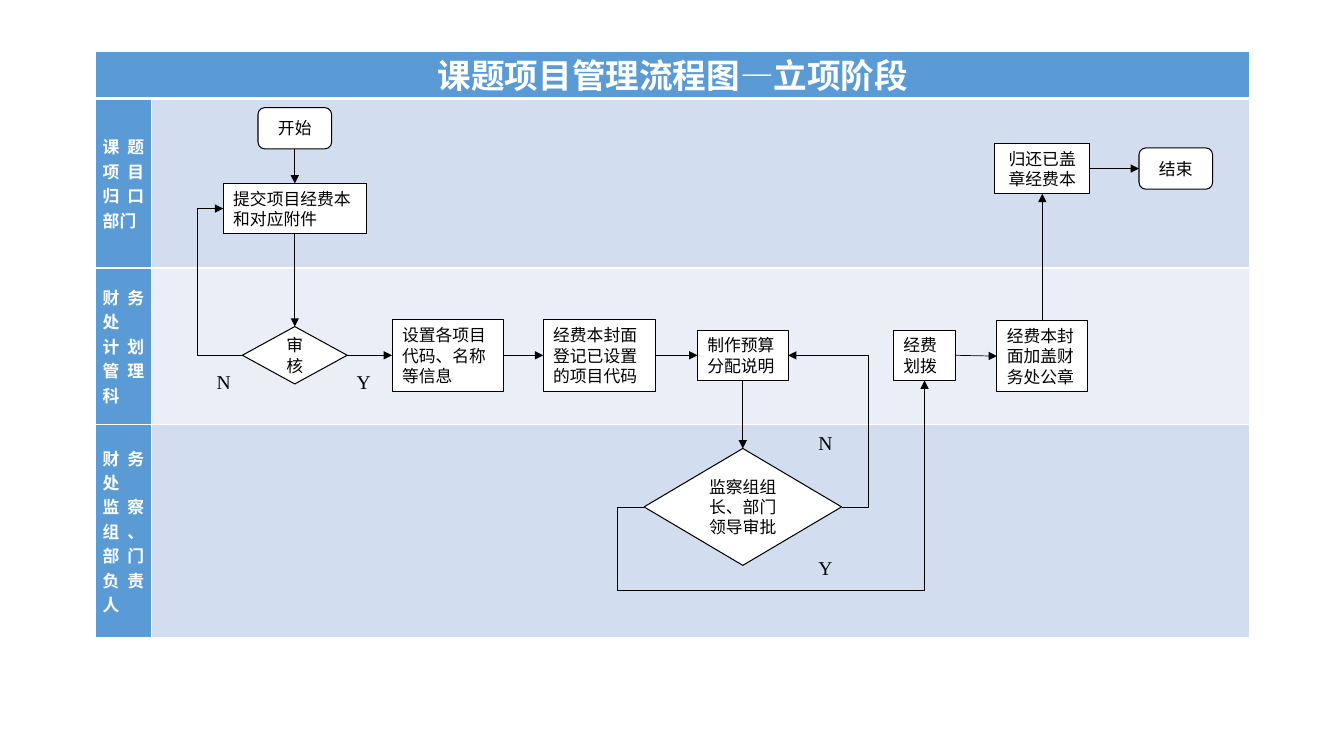
"""Builds the swimlane flowchart of the project set-up stage."""
from dataclasses import dataclass
from typing import Any, Optional

import lxml.etree
import pptx
import pptx.dml.color
import pptx.enum.shapes
import pptx.enum.text
import pptx.oxml.ns
import pptx.util

Pt = pptx.util.Pt
qn = pptx.oxml.ns.qn
Align = pptx.enum.text.PP_ALIGN
Anchor = pptx.enum.text.MSO_ANCHOR
Preset = pptx.enum.shapes.MSO_SHAPE
Route = pptx.enum.shapes.MSO_CONNECTOR
TOP, LEFT, BOTTOM, RIGHT = range(4)


@dataclass(frozen=True)
class Theme:
    header: str = "5B9BD5"
    lane_dark: str = "D2DEEF"
    lane_light: str = "EAEFF7"
    white: str = "FFFFFF"
    black: str = "000000"
    heading_font: str = "Calibri"
    step_font: str = "Times New Roman"
    title_size: float = 24
    text_size: float = 12
    answer_size: float = 14
    outline: float = 0.75
    thin: float = 0.5


@dataclass(frozen=True)
class Lane:
    names: tuple[str, ...]
    height: float
    fill: str


@dataclass(frozen=True)
class Step:
    text: str
    center_x: float
    center_y: float
    width: float
    height: float
    preset: Any = Preset.RECTANGLE
    align: Any = Align.LEFT


@dataclass(frozen=True)
class Flow:
    source: str
    source_side: int
    target: str
    target_side: int
    weight: float = 0.5
    via_x: Optional[float] = None
    via_y: Optional[float] = None


@dataclass(frozen=True)
class Answer:
    text: str
    left: float
    top: float


THEME = Theme()
CHART_LEFT, CHART_TOP = 68.4, 36.4
HEAD_WIDTH, LANE_WIDTH, TITLE_HEIGHT = 39.6, 784.8, 34
SUBMIT_X, APPROVE_X, STAMP_X = 210.6, 530.6, 744.5
RETURN_Y, FINANCE_Y, APPROVE_Y = 120.4, 253.8, 362.1

LANES = (
    Lane(("课题项目归口部门",), 121, THEME.lane_dark),
    Lane(("财务处", "计划管理科"), 111.6, THEME.lane_light),
    Lane(("财务处", "监察组、部门负责人"), 152.6, THEME.lane_dark),
)
STEPS = {
    "start": Step("开始", SUBMIT_X, 91.6, 52.6, 29.5, Preset.FLOWCHART_ALTERNATE_PROCESS, Align.CENTER),
    "submit": Step("提交项目经费本和对应附件", SUBMIT_X, 149, 102.2, 36),
    "review": Step("审核", SUBMIT_X, FINANCE_Y, 74.9, 41, Preset.DIAMOND, Align.CENTER),
    "codes": Step("设置各项目代码、名称等信息", 320, FINANCE_Y, 79.9, 51.1),
    "register": Step("经费本封面登记已设置的项目代码", 428, FINANCE_Y, 79.9, 51.1),
    "budget": Step("制作预算分配说明", APPROVE_X, FINANCE_Y, 64.8, 36),
    "approve": Step("监察组组长、部门领导审批", APPROVE_X, APPROVE_Y, 141.1, 83.5, Preset.DIAMOND, Align.CENTER),
    "allocate": Step("经费划拨", 660.4, FINANCE_Y, 44.6, 36),
    "stamp": Step("经费本封面加盖财务处公章", STAMP_X, 254.4, 64.8, 51.1),
    "return": Step("归还已盖章经费本", STAMP_X, RETURN_Y, 67.7, 36, align=Align.CENTER),
    "end": Step("结束", 839.9, RETURN_Y, 52.6, 29.5, Preset.FLOWCHART_ALTERNATE_PROCESS, Align.CENTER),
}
FLOWS = (
    Flow("start", BOTTOM, "submit", TOP, THEME.outline),
    Flow("submit", BOTTOM, "review", TOP),
    Flow("review", LEFT, "submit", LEFT, via_x=141.1),
    Flow("review", RIGHT, "codes", LEFT),
    Flow("codes", RIGHT, "register", LEFT),
    Flow("register", RIGHT, "budget", LEFT),
    Flow("budget", BOTTOM, "approve", TOP),
    Flow("approve", RIGHT, "budget", RIGHT, via_x=620),
    Flow("approve", LEFT, "allocate", BOTTOM, via_x=441, via_y=421.4),
    Flow("allocate", RIGHT, "stamp", LEFT),
    Flow("stamp", TOP, "return", BOTTOM),
    Flow("return", RIGHT, "end", LEFT, THEME.outline),
)
ANSWERS = (
    Answer("N", 147.6, 260.6),
    Answer("Y", 247.7, 260.6),
    Answer("N", 577.4, 304.6),
    Answer("Y", 577.4, 393.8),
)


def rgb(color: str) -> Any:
    return pptx.dml.color.RGBColor.from_string(color)


def write(frame: Any, *lines: str, size: float = THEME.text_size, font: str = THEME.step_font,
          color: str = THEME.black, bold: bool = False, align: Any = Align.LEFT) -> None:
    for index, line in enumerate(lines):
        paragraph = frame.add_paragraph() if index else frame.paragraphs[0]
        paragraph.alignment = align
        run = paragraph.add_run()
        run.text = line
        run.font.size, run.font.name, run.font.bold = Pt(size), font, bold
        run.font.color.rgb = rgb(color)


def paint_cell(cell: Any, fill: str, top: float = 1, bottom: float = 1) -> None:
    cell.fill.solid()
    cell.fill.fore_color.rgb = rgb(fill)
    properties = cell._tc.get_or_add_tcPr()
    for position, (side, weight) in enumerate((("L", 1), ("R", 1), ("T", top), ("B", bottom))):
        border = lxml.etree.Element(qn(f"a:ln{side}"), w=str(Pt(weight)))
        solid = lxml.etree.SubElement(border, qn("a:solidFill"))
        lxml.etree.SubElement(solid, qn("a:srgbClr"), val=THEME.white)
        properties.insert(position, border)


def draw_lanes(slide: Any) -> None:
    heights = [TITLE_HEIGHT, *(lane.height for lane in LANES)]
    lanes = slide.shapes.add_table(len(heights), 2, Pt(CHART_LEFT), Pt(CHART_TOP),
                                   Pt(HEAD_WIDTH + LANE_WIDTH), Pt(sum(heights))).table
    lanes.columns[0].width, lanes.columns[1].width = Pt(HEAD_WIDTH), Pt(LANE_WIDTH)
    for row, height in zip(lanes.rows, heights):
        row.height = Pt(height)
    lanes.cell(0, 0).merge(lanes.cell(0, 1))
    for column in range(2):
        paint_cell(lanes.cell(0, column), THEME.header, bottom=3)
    for index, lane in enumerate(LANES, start=1):
        top = 3 if index == 1 else 1
        head = lanes.cell(index, 0)
        paint_cell(head, THEME.header, top)
        paint_cell(lanes.cell(index, 1), lane.fill, top)
        head.vertical_anchor = Anchor.MIDDLE
        head.margin_left = head.margin_right = Pt(5)
        head.margin_top = head.margin_bottom = Pt(0)
        head._tc.get_or_add_tcPr().set("vert", "eaVert")
        write(head.text_frame, *lane.names, font=THEME.heading_font, color=THEME.white,
              bold=True, align=Align.JUSTIFY)


def place_title(slide: Any) -> None:
    title = slide.shapes.title
    title.left, title.top = Pt(CHART_LEFT), Pt(CHART_TOP)
    title.width, title.height = Pt(HEAD_WIDTH + LANE_WIDTH), Pt(TITLE_HEIGHT)
    frame = title.text_frame
    frame.margin_top = frame.margin_bottom = Pt(0)
    frame.vertical_anchor = Anchor.MIDDLE
    write(frame, "课题项目管理流程图—立项阶段", size=THEME.title_size, font=THEME.heading_font,
          color=THEME.white, bold=True, align=Align.CENTER)
    title.element.getparent().append(title.element)


def draw_step(slide: Any, step: Step) -> Any:
    box = slide.shapes.add_shape(step.preset, Pt(step.center_x - step.width / 2),
                                 Pt(step.center_y - step.height / 2), Pt(step.width), Pt(step.height))
    box.shadow.inherit = False
    box.fill.solid()
    box.fill.fore_color.rgb = rgb(THEME.white)
    box.line.color.rgb, box.line.width = rgb(THEME.black), Pt(THEME.outline)
    box.text_frame.word_wrap = True
    box.text_frame.vertical_anchor = Anchor.MIDDLE
    write(box.text_frame, step.text, align=step.align)
    return box


def draw_flow(slide: Any, flow: Flow, boxes: dict[str, Any]) -> None:
    route = Route.STRAIGHT if flow.via_x is None else Route.ELBOW
    arrow = slide.shapes.add_connector(route, 0, 0, 0, 0)
    arrow.begin_connect(boxes[flow.source], flow.source_side)
    arrow.end_connect(boxes[flow.target], flow.target_side)
    arrow.line.color.rgb, arrow.line.width = rgb(THEME.black), Pt(flow.weight)
    properties = arrow.element.spPr
    lxml.etree.SubElement(properties.find(qn("a:ln")), qn("a:tailEnd"), type="triangle")
    lxml.etree.SubElement(properties, qn("a:effectLst"))
    bends = []
    if flow.via_x is not None:
        bends.append((Pt(flow.via_x) - arrow.begin_x) / (arrow.end_x - arrow.begin_x))
    if flow.via_y is not None:
        bends.append((Pt(flow.via_y) - arrow.begin_y) / (arrow.end_y - arrow.begin_y))
        properties.find(qn("a:prstGeom")).set("prst", "bentConnector4")
    guides = properties.find(qn("a:prstGeom")).find(qn("a:avLst"))
    for number, bend in enumerate(bends, start=1):
        lxml.etree.SubElement(guides, qn("a:gd"), name=f"adj{number}", fmla=f"val {round(bend * 100000)}")


def draw_answer(slide: Any, answer: Answer) -> None:
    box = slide.shapes.add_textbox(Pt(answer.left), Pt(answer.top), Pt(32), Pt(24.5))
    box.text_frame.word_wrap = True
    write(box.text_frame, answer.text, size=THEME.answer_size)


def main() -> None:
    deck = pptx.Presentation()
    deck.slide_width, deck.slide_height = Pt(960), Pt(540)
    slide = deck.slides.add_slide(deck.slide_layouts[5])
    draw_lanes(slide)
    place_title(slide)
    boxes = {name: draw_step(slide, step) for name, step in STEPS.items()}
    for flow in FLOWS:
        draw_flow(slide, flow, boxes)
    for answer in ANSWERS:
        draw_answer(slide, answer)
    deck.save("out.pptx")


if __name__ == "__main__":
    main()
